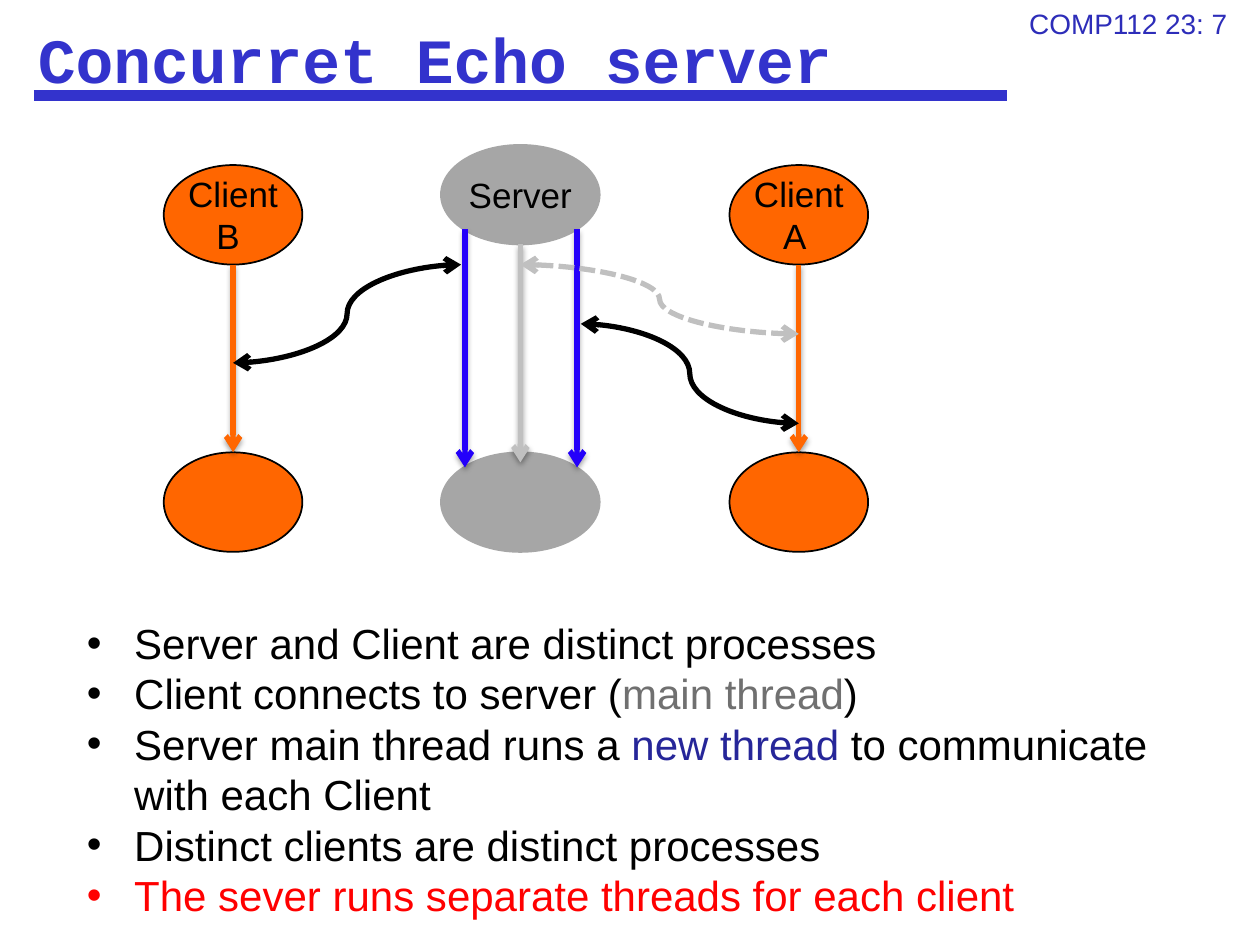
import pptx
import pptx.dml.color
import pptx.enum.dml
import pptx.enum.shapes
import pptx.enum.text
import pptx.oxml
import pptx.oxml.ns
import pptx.util
from dataclasses import dataclass
from pptx.util import Inches


@dataclass(frozen=True)
class Theme:
    font: str = "Arial"
    title_font: str = "Courier New"
    title_size: int = 36
    body_size: int = 24
    node_size: int = 20
    page_size: int = 16
    title: str = "3333CC"
    page: str = "2D2DB9"
    text: str = "000000"
    client: str = "FF6600"
    server: str = "A6A6A6"
    main_thread: str = "C0C0C0"
    new_thread: str = "2400FA"
    main_text: str = "707070"
    new_text: str = "262699"
    alert: str = "FF0000"


theme = Theme()
rgb = pptx.dml.color.RGBColor.from_string
connector_type = pptx.enum.shapes.MSO_CONNECTOR
alignment = pptx.enum.text.PP_ALIGN
middle = pptx.enum.text.MSO_ANCHOR.MIDDLE
namespace = pptx.oxml.ns.nsdecls("a")
SHADOW = (
    '<a:outerShdw blurRad="39370" dist="22860" dir="5400000" rotWithShape="0">'
    '<a:srgbClr val="000000"><a:alpha val="35000"/></a:srgbClr></a:outerShdw>'
)


def add_run(paragraph, text, size, color, font=theme.font, bold=False):
    run = paragraph.add_run()
    run.text = text
    run.font.name = font
    run.font.size = pptx.util.Pt(size)
    run.font.bold = bold
    run.font.color.rgb = rgb(color)


def add_line(kind, start, end, color, width=3, ends=(), effect="", dash=None):
    """Draw a connector; ends lists the ends (headEnd, tailEnd) that get an arrow."""
    line = slide.shapes.add_connector(kind, *map(Inches, start + end))
    line.line.color.rgb = rgb(color)
    line.line.width = pptx.util.Pt(width)
    if dash:
        line.line.dash_style = dash
    properties = line._element.spPr
    outline = properties.find(pptx.oxml.ns.qn("a:ln"))
    for end_name in ends:
        outline.append(pptx.oxml.parse_xml(f'<a:{end_name} {namespace} type="arrow"/>'))
    properties.append(pptx.oxml.parse_xml(f"<a:effectLst {namespace}>{effect}</a:effectLst>"))


presentation = pptx.Presentation()
presentation.slide_width = Inches(10)
presentation.slide_height = Inches(7.5)
slide = presentation.slides.add_slide(presentation.slide_layouts[1])

# Title, its underline and the page label
title = slide.shapes.title
title.left, title.top, title.width, title.height = map(Inches, (0.2, 0, 8.83, 0.92))
title.text_frame.vertical_anchor = middle
paragraph = title.text_frame.paragraphs[0]
paragraph.alignment = alignment.LEFT
add_run(paragraph, "Concurret Echo server", theme.title_size, theme.title, theme.title_font, True)
add_line(connector_type.STRAIGHT, (0.27, 0.76), (7.99, 0.76), theme.title, width=6)

page_label = slide.shapes.add_textbox(*map(Inches, (8.07, 0, 1.93, 0.37)))
page_label.text_frame.word_wrap = True
add_run(page_label.text_frame.paragraphs[0], "COMP112 23: 7", theme.page_size, theme.page)

# Processes: a labelled ellipse above an empty one
bottom_top, node_height = 3.59, 0.79
processes = [
    ("Client A ", 5.79, 1.31, 1.1, theme.client, theme.text),
    ("Server ", 3.5, 1.15, 1.26, theme.server, theme.server),
    ("Client B ", 1.3, 1.31, 1.1, theme.client, theme.text),
]
for label, left, first_top, width, fill, outline_color in processes:
    for text, top in ((label, first_top), ("", bottom_top)):
        node = slide.shapes.add_shape(
            pptx.enum.shapes.MSO_SHAPE.OVAL, *map(Inches, (left, top, width, node_height))
        )
        node.shadow.inherit = False
        node.fill.solid()
        node.fill.fore_color.rgb = rgb(fill)
        node.line.color.rgb = rgb(outline_color)
        node.line.width = pptx.util.Pt(1)
        if text:
            frame = node.text_frame
            frame.word_wrap = True
            frame.vertical_anchor = middle
            frame.margin_left = frame.margin_right = frame.margin_top = frame.margin_bottom = 0
            frame.paragraphs[0].alignment = alignment.CENTER
            add_run(frame.paragraphs[0], text, theme.node_size, theme.text)

# Threads run straight down
threads = [
    (6.34, 2.1, 3.59, theme.client),
    (1.85, 2.1, 3.59, theme.client),
    (4.58, 1.82, 3.71, theme.new_thread),
    (3.69, 1.82, 3.71, theme.new_thread),
    (4.13, 1.94, 3.67, theme.main_thread),
]
for x, top, bottom, color in threads:
    add_line(connector_type.STRAIGHT, (x, top), (x, bottom), color, ends=("tailEnd",), effect=SHADOW)

# Messages between server threads and clients
messages = [
    ((4.61, 2.57), (6.34, 3.36), theme.text, None),
    ((3.66, 2.1), (1.85, 2.88), theme.text, None),
    ((4.13, 2.1), (6.34, 2.65), theme.main_thread, pptx.enum.dml.MSO_LINE.SQUARE_DOT),
]
for start, end, color, dash in messages:
    add_line(connector_type.CURVE, start, end, color, ends=("headEnd", "tailEnd"), dash=dash)

# Bullet list
bullets = [
    [("Server and Client are distinct processes", theme.text)],
    [("Client connects to server (", theme.text), ("main thread", theme.main_text), (")", theme.text)],
    [
        ("Server main thread runs a ", theme.text),
        ("new thread ", theme.new_text),
        ("to communicate with each Client", theme.text),
    ],
    [("Distinct clients are distinct processes", theme.text)],
    [("The sever runs separate threads for each client", theme.alert)],
]
body = slide.placeholders[1]
body.left, body.top, body.width, body.height = map(Inches, (0.59, 4.85, 8.9, 2.52))
for index, runs in enumerate(bullets):
    frame = body.text_frame
    paragraph = frame.add_paragraph() if index else frame.paragraphs[0]
    paragraph.space_before = pptx.util.Pt(0)
    for text, color in runs:
        add_run(paragraph, text, theme.body_size, color)

presentation.save("out.pptx")
